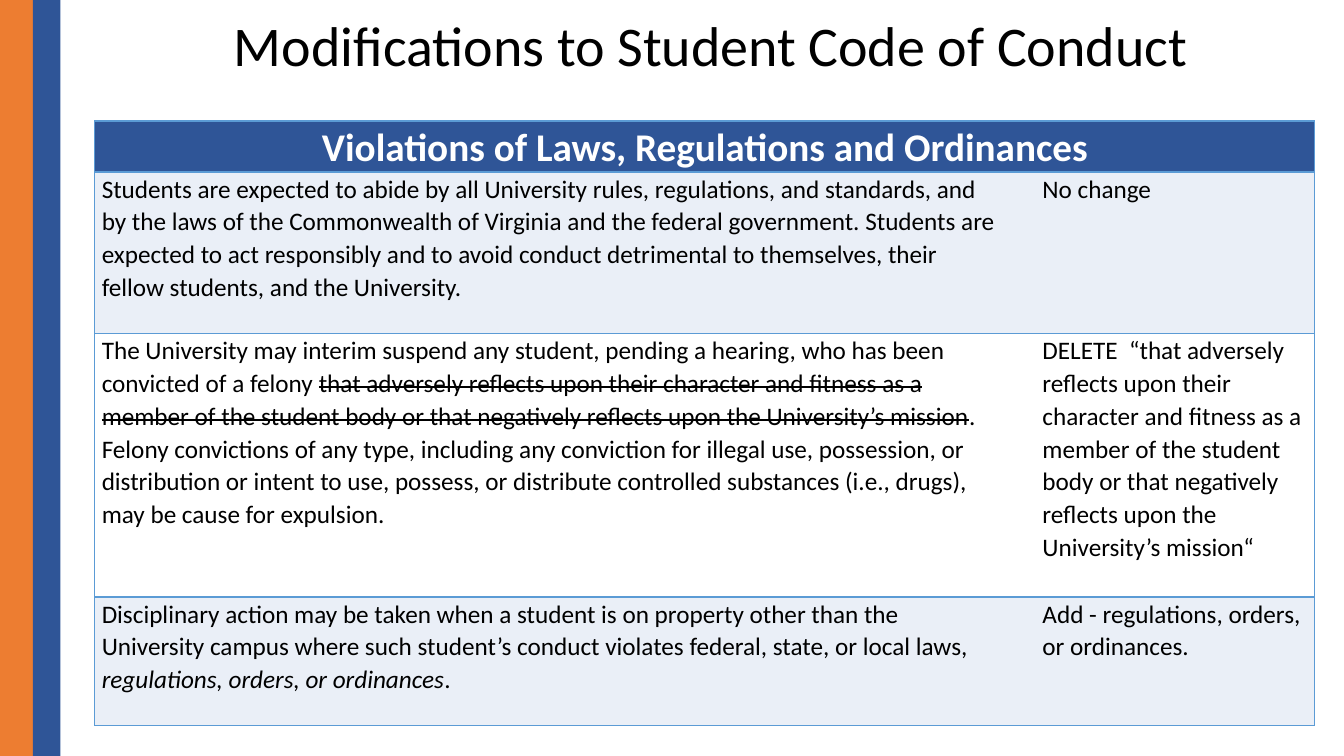
from lxml import etree
from pptx import Presentation
from pptx import util as u
from pptx.dml.color import RGBColor
from pptx.enum import shapes, text
from pptx.oxml import ns

COLORS = {"blue": "2F5597", "orange": "ED7D31", "line": "5B9BD5",
          "band": "EAEFF7", "white": "FFFFFF", "black": "000000"}

HEADER = "Violations of Laws, Regulations and Ordinances"
ROWS = [
    ([("Students are expected to abide by all University rules, regulations, and standards, and by the laws of the Commonwealth of Virginia and the federal government. Students are expected to act responsibly and to avoid conduct detrimental to themselves, their fellow students, and the University.", {})],
     "No change"),
    ([("The University may interim suspend any student, pending a hearing, who has been convicted of a felony ", {}),
      ("that adversely reflects upon their character and fitness as a member of the student body or that negatively reflects upon the University’s mission", {"strike": True}),
      (". Felony convictions of any type, including any conviction for illegal use, possession, or distribution or intent to use, possess, or distribute controlled substances (i.e., drugs), may be cause for expulsion.", {})],
     "DELETE  “that adversely reflects upon their character and fitness as a member of the student body or that negatively reflects upon the University’s mission“"),
    ([("Disciplinary action may be taken when a student is on property other than the University campus where such student’s conduct violates federal, state, or local laws, ", {}),
      ("regulations, orders, or ordinances", {"italic": True}),
      (".", {})],
     "Add - regulations, orders, or ordinances."),
]
COL_WIDTHS = [652.5, 19.5, 199.5]
ROW_HEIGHTS = [36.4, 115.2, 188.4, 92]


def rgb(name):
    return RGBColor.from_string(COLORS[name])


def add_text(p, content, size=18, color="black", bold=False, italic=False,
             strike=False, align=text.PP_ALIGN.LEFT, spacing=1.07):
    p.alignment = align
    p.line_spacing = spacing
    r = p.add_run()
    r.text = content
    f = r.font
    f.name, f.size, f.bold, f.italic = "Calibri", u.Pt(size), bold, italic
    f.color.rgb = rgb(color)
    if strike:
        r._r.get_or_add_rPr().set("strike", "sngStrike")


def style_cell(cell, fill, sides):
    cell.margin_left = cell.margin_right = u.Pt(5)
    cell.margin_top = cell.margin_bottom = 0
    tcPr = cell._tc.get_or_add_tcPr()
    for side in "LRTB":
        ln = etree.SubElement(tcPr, ns.qn(f"a:ln{side}"), w=str(u.Pt(1)))
        if side in sides:
            solid = etree.SubElement(ln, ns.qn("a:solidFill"))
            etree.SubElement(solid, ns.qn("a:srgbClr"), val=COLORS["line"])
        else:
            etree.SubElement(ln, ns.qn("a:noFill"))
    cell.fill.solid()
    cell.fill.fore_color.rgb = rgb(fill)


def side_bars(s, x, y, h):
    for color, w in (("orange", 23.5), ("blue", 19.7)):
        sp = s.shapes.add_shape(shapes.MSO_SHAPE.RECTANGLE,
                                u.Pt(x), u.Pt(y), u.Pt(w), u.Pt(h))
        sp.shadow.inherit = False
        sp.fill.solid()
        sp.fill.fore_color.rgb = rgb(color)
        sp.line.fill.background()
        x += w


def title(s, x, y, w, h):
    tf = s.shapes.add_textbox(u.Pt(x), u.Pt(y), u.Pt(w), u.Pt(h)).text_frame
    tf.word_wrap = True
    tf.vertical_anchor = text.MSO_ANCHOR.MIDDLE
    add_text(tf.paragraphs[0], "Modifications to Student Code of Conduct",
             size=40, spacing=0.9)


def changes_table(s, x, y):
    table = s.shapes.add_table(
        len(ROW_HEIGHTS), len(COL_WIDTHS), u.Pt(x), u.Pt(y),
        u.Pt(sum(COL_WIDTHS)), u.Pt(sum(ROW_HEIGHTS))).table
    for col, w in zip(table.columns, COL_WIDTHS):
        col.width = u.Pt(w)
    for row, h in zip(table.rows, ROW_HEIGHTS):
        row.height = u.Pt(h)

    for c in range(len(COL_WIDTHS)):
        style_cell(table.cell(0, c), "blue", "LRTB")
    head = table.cell(0, 0)
    head.merge(table.cell(0, len(COL_WIDTHS) - 1))
    add_text(head.text_frame.paragraphs[0], HEADER, size=28, color="white",
             bold=True, align=text.PP_ALIGN.CENTER)

    for i, (rule, change) in enumerate(ROWS, 1):
        for c, sides in enumerate(("LTB", "TB", "RTB")):
            style_cell(table.cell(i, c), "band" if i % 2 else "white", sides)
        for content, fmt in rule:
            add_text(table.cell(i, 0).text_frame.paragraphs[0], content, **fmt)
        add_text(table.cell(i, 2).text_frame.paragraphs[0], change)


def main():
    prs = Presentation()
    prs.slide_width, prs.slide_height = u.Pt(960), u.Pt(540)
    s = prs.slides.add_slide(prs.slide_layouts[6])
    side_bars(s, 0, 0, 540)
    title(s, 160, -18, 730, 104.4)
    changes_table(s, 67.7, 86.4)
    prs.save("out.pptx")


if __name__ == "__main__":
    main()
